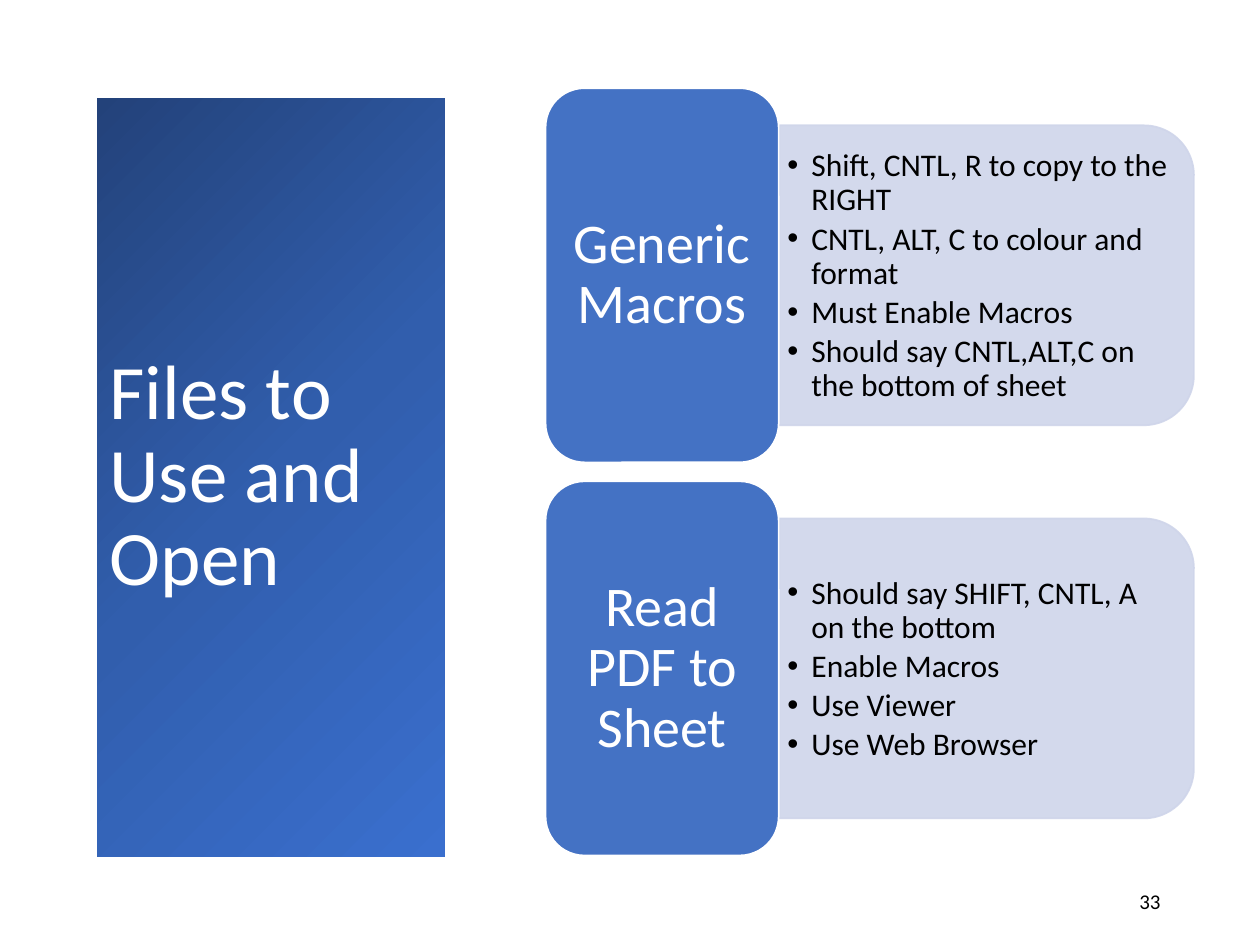
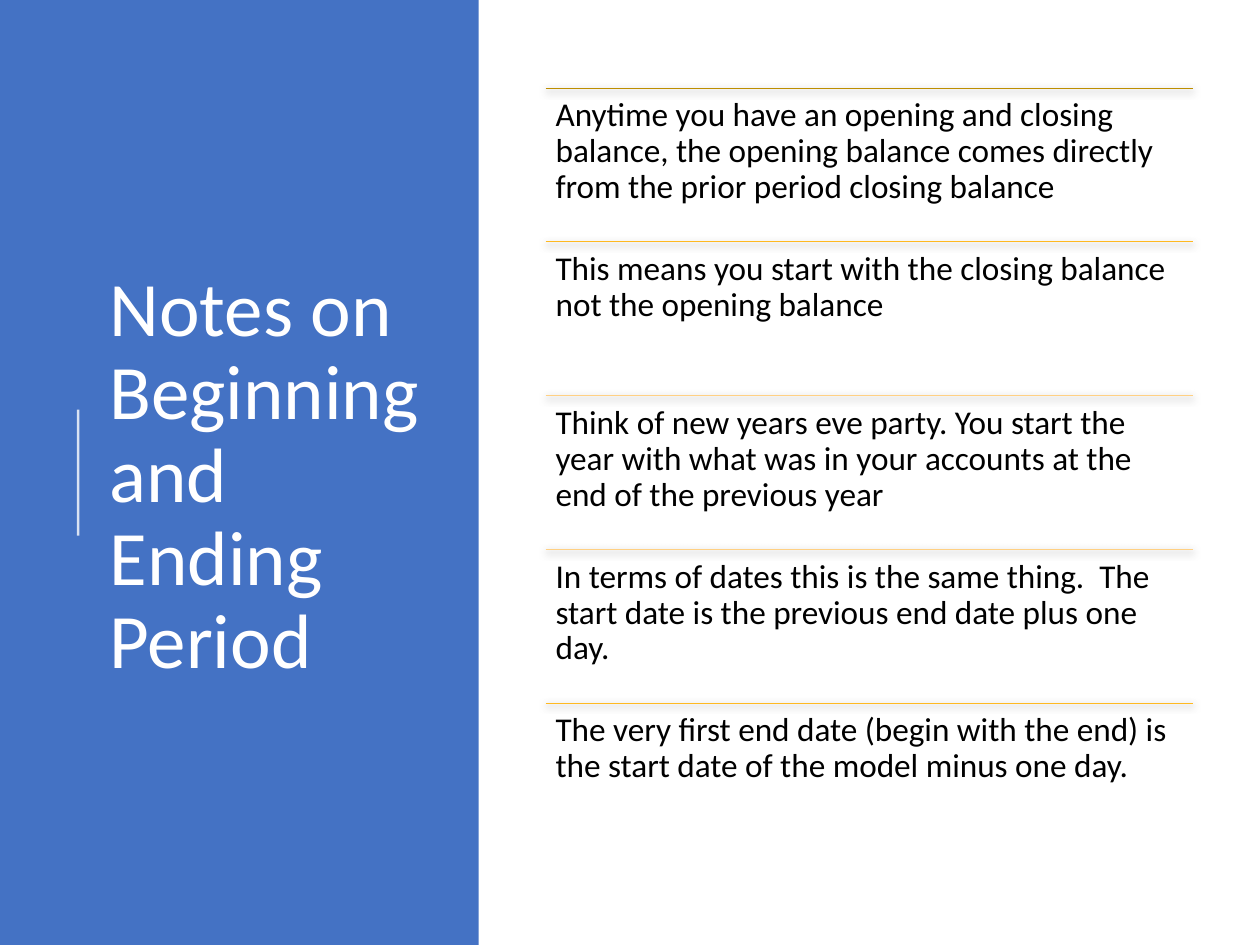
"""Build two training slides: files to open, and notes on beginning and ending periods."""
from copy import deepcopy
from dataclasses import dataclass

from lxml.etree import SubElement
from pptx import Presentation
from pptx.dml.color import RGBColor
from pptx.enum.shapes import MSO_CONNECTOR, MSO_SHAPE
from pptx.enum.text import MSO_ANCHOR, MSO_AUTO_SIZE, PP_ALIGN
from pptx.oxml.ns import qn
from pptx.util import Inches, Pt


@dataclass(frozen=True)
class Theme:
    font: str = "Calibri"
    white: RGBColor = RGBColor.from_string("FFFFFF")
    black: RGBColor = RGBColor.from_string("000000")
    blue: RGBColor = RGBColor.from_string("4472C4")
    pale: RGBColor = RGBColor.from_string("CFD5EA")
    gradient: tuple = ("23427A", "315EAD", "3A6FCE")
    rules: tuple = ("BD8E00", "FFB920", "FFD083", "FFD083", "FFB920")
    title: int = 44
    label: int = 32
    note: int = 19
    detail: int = 18
    number: int = 12


theme = Theme()


def write(shape, *texts, size, color=theme.black, align=PP_ALIGN.LEFT, anchor=MSO_ANCHOR.MIDDLE,
          insets=(0.1, 0.05), spacing=0.9, after=0, bullet=False):
    frame = shape.text_frame
    frame.auto_size = MSO_AUTO_SIZE.NONE
    frame.word_wrap = True
    frame.vertical_anchor = anchor
    frame.margin_left = frame.margin_right = Inches(insets[0])
    frame.margin_top = frame.margin_bottom = Inches(insets[1])
    frame.text = "\n".join(texts)
    for para in frame.paragraphs:
        if bullet:
            properties = para._p.get_or_add_pPr()
            properties.set("marL", str(Inches(0.19)))
            properties.set("indent", str(Inches(-0.19)))
            SubElement(properties, qn("a:buFont"), typeface="Arial")
            SubElement(properties, qn("a:buChar"), char="•")
        para.alignment = align
        para.line_spacing = spacing
        para.space_before = Pt(0)
        para.space_after = Pt(after)
        span = para.runs[0]
        span.font.name = theme.font
        span.font.size = Pt(size)
        span.font.color.rgb = color


def add_alpha(element, percent):
    for color in element.iter(qn("a:srgbClr")):
        SubElement(color, qn("a:alpha"), val=str(percent * 1000))


deck = Presentation()
deck.slide_width, deck.slide_height = Inches(10), Inches(7.5)

pages = []
for heading in ("Files to Use and Open", "Notes on Beginning and Ending Period"):
    page = deck.slides.add_slide(deck.slide_layouts[5])
    title = page.shapes.title
    title.left, title.top, title.width, title.height = map(Inches, (0.77, 0.78, 2.76, 6.02))
    write(title, heading, size=theme.title, color=theme.white)
    pages.append(page)
files_page, notes_page = pages

fill = files_page.shapes.title.fill
fill.gradient()
fill.gradient_angle = 315
stop_list = files_page.shapes.title.element.find(".//" + qn("a:gsLst"))
stop_list.insert(1, deepcopy(stop_list[0]))
for index, (stop, color) in enumerate(zip(fill.gradient_stops, theme.gradient)):
    stop.position = index / 2
    stop.color.rgb = RGBColor.from_string(color)

file_groups = {
    "Generic Macros": (
        "Shift, CNTL, R to copy to the RIGHT",
        "CNTL, ALT, C to colour and format",
        "Must Enable Macros",
        "Should say CNTL,ALT,C on the bottom of sheet",
    ),
    "Read PDF to Sheet": (
        "Should say SHIFT, CNTL, A on the bottom",
        "Enable Macros",
        "Use Viewer",
        "Use Web Browser",
    ),
}
for index, (name, details) in enumerate(file_groups.items()):
    top = 0.7 + index * 3.12
    panel = files_page.shapes.add_shape(MSO_SHAPE.ROUND_2_SAME_RECTANGLE, Inches(6.64),
                                        Inches(top - 0.16), Inches(2.38), Inches(3.29))
    panel.rotation = 90
    panel.shadow.inherit = False
    panel.fill.solid()
    panel.fill.fore_color.rgb = panel.line.color.rgb = theme.pale
    panel.line.width = Pt(1)
    add_alpha(panel.element.spPr, 90)

    box = files_page.shapes.add_textbox(Inches(6.18), Inches(top + 0.42), Inches(3.17), Inches(2.15))
    write(box, *details, size=theme.detail, insets=(0.07, 0.04), after=3, bullet=True)

    label = files_page.shapes.add_shape(MSO_SHAPE.ROUNDED_RECTANGLE, Inches(4.33), Inches(top),
                                        Inches(1.85), Inches(2.97))
    label.shadow.inherit = False
    label.fill.solid()
    label.fill.fore_color.rgb = theme.blue
    label.line.color.rgb = theme.white
    label.line.width = Pt(1)
    write(label, name, size=theme.label, color=theme.white, align=PP_ALIGN.CENTER, insets=(0.12, 0.07))

number = files_page.shapes.add_textbox(Inches(7.06), Inches(6.95), Inches(2.25), Inches(0.4))
write(number, "33", size=theme.number, align=PP_ALIGN.RIGHT, spacing=1.0)

band = notes_page.shapes.add_shape(MSO_SHAPE.RECTANGLE, 0, 0, Inches(3.8), deck.slide_height)
band.shadow.inherit = False
band.fill.solid()
band.fill.fore_color.rgb = theme.blue
band.line.fill.background()
band.element.addnext(notes_page.shapes.title.element)

accent = notes_page.shapes.add_connector(MSO_CONNECTOR.STRAIGHT, Inches(0.62), Inches(4.25),
                                         Inches(0.62), Inches(3.25))
accent.line.color.rgb = theme.white
accent.line.width = Pt(1.5)
add_alpha(accent.element.spPr, 80)
SubElement(accent.element.spPr, qn("a:effectLst"))

notes = (
    "Anytime you have an opening and closing balance, the opening balance comes directly "
    "from the prior period closing balance",
    "This means you start with the closing balance not the opening balance",
    "Think of new years eve party. You start the year with what was in your accounts "
    "at the end of the previous year",
    "In terms of dates this is the same thing.  The start date is the previous end date plus one day.",
    "The very first end date (begin with the end) is the start date of the model minus one day.",
)
for index, (note, color) in enumerate(zip(notes, theme.rules)):
    top = Inches(0.7 + index * 1.22)
    rule = notes_page.shapes.add_connector(MSO_CONNECTOR.STRAIGHT, Inches(4.33), top, Inches(9.47), top)
    rule.line.color.rgb = RGBColor.from_string(color)
    rule.line.width = Pt(0.5)
    effects = SubElement(rule.element.spPr, qn("a:effectLst"))
    shadow = SubElement(effects, qn("a:outerShdw"), blurRad=str(Pt(4.5)), dist=str(Pt(1.5)),
                        dir="5400000", algn="ctr", rotWithShape="0")
    SubElement(shadow, qn("a:srgbClr"), val=str(theme.black))
    add_alpha(shadow, 63)
    box = notes_page.shapes.add_textbox(Inches(4.33), top, Inches(5.14), Inches(1.22))
    write(box, note, size=theme.note, anchor=MSO_ANCHOR.TOP, insets=(0.08, 0.08))

deck.save("out.pptx")
